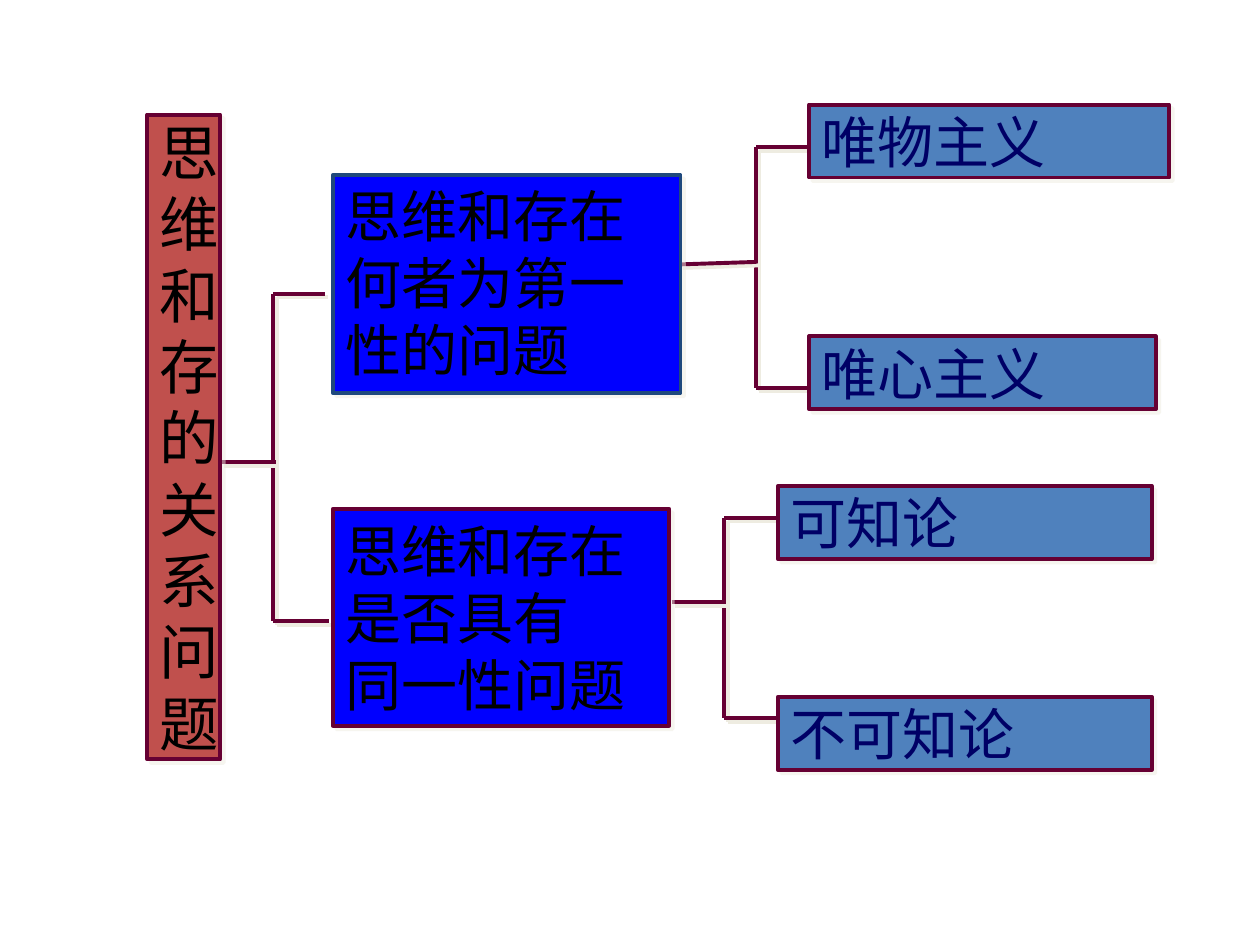
from typing import NamedTuple

from lxml import etree
from pptx import Presentation
from pptx.dml.color import RGBColor
from pptx.enum.shapes import MSO_CONNECTOR, MSO_SHAPE
from pptx.enum.text import MSO_ANCHOR, PP_ALIGN
from pptx.oxml.ns import qn
from pptx.util import Cm, Pt

RECTANGLE = MSO_SHAPE.RECTANGLE
STRAIGHT = MSO_CONNECTOR.STRAIGHT
MIDDLE, TOP = MSO_ANCHOR.MIDDLE, MSO_ANCHOR.TOP
LEFT = PP_ALIGN.LEFT

SANS = "Noto Sans CJK SC"
MAROON, NAVY, BLACK = "660033", "000066", "000000"
RED, BLUE, STEEL, DARK_BLUE = "C0504D", "0000FF", "4F81BD", "1F497D"
SHADOW = "EEECE1"
LEAF_HEIGHT = 1.47


class Node(NamedTuple):
    text: str
    left: float
    top: float
    width: float
    height: float = LEAF_HEIGHT
    fill: str = STEEL
    line: str = MAROON
    color: str = NAVY
    font: str = SANS
    size: int = 32
    anchor: MSO_ANCHOR = MIDDLE
    wrap: bool = False


class Bracket(NamedTuple):
    spine: float
    top: float
    bottom: float
    stem_start: tuple[float, float]
    stem_end: tuple[float, float]
    upper_end: float
    lower_end: float


NODES = [
    Node("\n".join("思维和存的关系问题"), 2.97, 2.31, 1.47, 13.0, RED,
         color=BLACK, font="Times New Roman", size=34),
    Node("思维和存在何者为第一性的问题", 6.71, 3.53, 7.01, 4.39, BLUE, DARK_BLUE,
         BLACK, "Arial", anchor=TOP, wrap=True),
    Node("思维和存在\n是否具有\n同一性问题", 6.71, 10.26, 6.78, 4.37, BLUE, color=BLACK),
    Node("唯物主义", 16.31, 2.11, 7.26),
    Node("唯心主义", 16.31, 6.78, 6.99),
    Node("可知论", 15.68, 9.8, 7.54),
    Node("不可知论", 15.68, 14.05, 7.54),
]

BRACKETS = [
    Bracket(5.51, 5.92, 12.52, (4.45, 9.32), (5.56, 9.32), 6.55, 6.63),
    Bracket(15.24, 2.97, 7.82, (13.69, 5.33), (15.24, 5.28), 16.31, 16.36),
    Bracket(14.6, 10.44, 14.48, (13.54, 12.14), (14.6, 12.14), 15.68, 15.72),
]


def rgb(value: str) -> RGBColor:
    """Turn a hex string into a colour."""
    return RGBColor.from_string(value)


def add_shadow(shape, opacity: int) -> None:
    """Give a shape a small hard shadow to the lower right."""
    effects = etree.SubElement(shape._element.spPr, qn("a:effectLst"))
    shadow = etree.SubElement(effects, qn("a:outerShdw"), dist="35560",
                              dir="2700000", algn="ctr", rotWithShape="0")
    color = etree.SubElement(shadow, qn("a:srgbClr"), val=SHADOW)
    etree.SubElement(color, qn("a:alpha"), val=str(opacity * 1000))


def add_line(page, start: tuple[float, float], end: tuple[float, float]) -> None:
    """Draw one straight line of a bracket."""
    line = page.shapes.add_connector(
        STRAIGHT, Cm(start[0]), Cm(start[1]), Cm(end[0]), Cm(end[1]))
    line.line.color.rgb = rgb(MAROON)
    line.line.width = Pt(2.25)
    add_shadow(line, 100)


def add_bracket(page, bracket: Bracket) -> None:
    """Draw a spine with its stem and two branches."""
    upper, lower = (bracket.spine, bracket.top), (bracket.spine, bracket.bottom)
    add_line(page, upper, lower)
    add_line(page, bracket.stem_start, bracket.stem_end)
    add_line(page, upper, (bracket.upper_end, bracket.top))
    add_line(page, lower, (bracket.lower_end, bracket.bottom))


def add_node(page, node: Node) -> None:
    """Draw a filled box with its text."""
    box = page.shapes.add_shape(
        RECTANGLE, Cm(node.left), Cm(node.top), Cm(node.width), Cm(node.height))
    box.fill.solid()
    box.fill.fore_color.rgb = rgb(node.fill)
    box.line.color.rgb = rgb(node.line)
    box.line.width = Pt(2.25)
    add_shadow(box, 50)
    frame = box.text_frame
    frame.text = node.text
    frame.word_wrap = node.wrap
    frame.vertical_anchor = node.anchor
    for paragraph in frame.paragraphs:
        paragraph.alignment = LEFT
        for span in paragraph.runs:
            span.font.name = node.font
            span.font.size = Pt(node.size)
            span.font.color.rgb = rgb(node.color)


def main() -> None:
    """Build the concept tree and save it."""
    deck = Presentation()
    deck.slide_width, deck.slide_height = Cm(25.4), Cm(19.05)
    page = deck.slides.add_slide(deck.slide_layouts[6])
    for bracket in BRACKETS:
        add_bracket(page, bracket)
    for node in NODES:
        add_node(page, node)
    deck.save("out.pptx")


if __name__ == "__main__":
    main()
